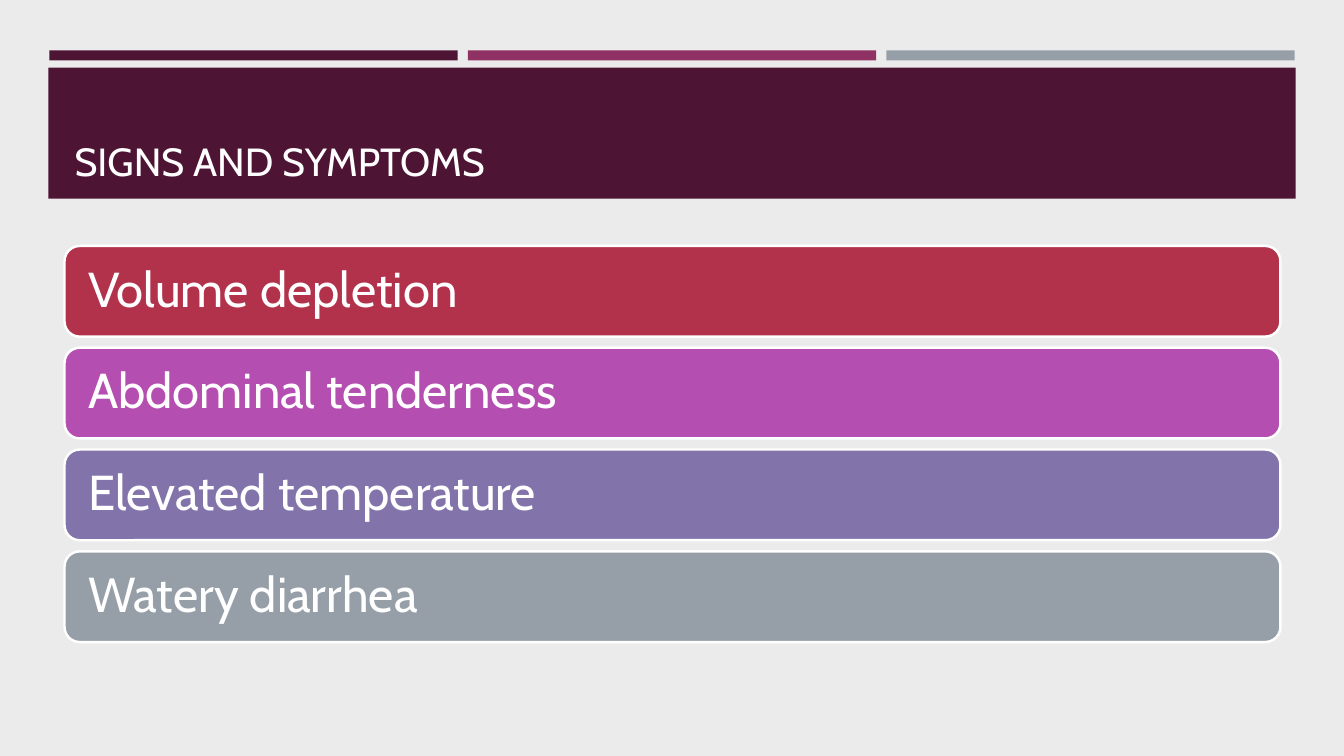
from pptx import Presentation
from pptx.dml.color import RGBColor
from pptx.enum.shapes import MSO_SHAPE as Shape
from pptx.enum.text import MSO_ANCHOR as Anchor, MSO_AUTO_SIZE as AutoSize, PP_ALIGN as Align
from pptx.util import Pt

EMU_PER_PX = 9144  # 100 px to the inch
COLOURS = {
    "background": "EBEBEB",
    "plum": "4D1434",
    "berry": "903163",
    "grey": "969FA7",
    "red": "B2324B",
    "orchid": "B44EB1",
    "violet": "8274AB",
    "white": "FFFFFF",
}
SYMPTOMS = [
    ("Volume depletion", "red"),
    ("Abdominal tenderness", "orchid"),
    ("Elevated temperature", "violet"),
    ("Watery diarrhea", "grey"),
]


def px(length):
    return length * EMU_PER_PX


def colour(name):
    return RGBColor.from_string(COLOURS[name])


def apply(target, values):
    """Set each named attribute of the target."""
    for name, value in values.items():
        setattr(target, name, value)


class SlideBuilder:
    font = "Cabin"

    def __init__(self, deck):
        self.page = deck.slides.add_slide(deck.slide_layouts[5])
        fill = self.page.background.fill
        fill.solid()
        fill.fore_color.rgb = colour("background")

    def block(self, kind, left, top, width, height, fill):
        box = self.page.shapes.add_shape(kind, px(left), px(top), px(width), px(height))
        box.shadow.inherit = False
        box.fill.solid()
        box.fill.fore_color.rgb = colour(fill)
        box.line.fill.background()
        return box

    def label(self, box, text, size, anchor, inset, **spacing):
        frame = box.text_frame
        frame.text = text
        apply(frame, {
            "word_wrap": True,
            "auto_size": AutoSize.NONE,
            "vertical_anchor": anchor,
            "margin_left": px(inset),
            "margin_right": px(inset),
        })
        para = frame.paragraphs[0]
        apply(para, {"alignment": Align.LEFT, **spacing})
        span = para.runs[0]
        apply(span.font, {"name": self.font, "size": Pt(size)})
        span.font.color.rgb = colour("white")

    def title(self, text, left, top, width, height):
        box = self.page.shapes.title
        apply(box, {"left": px(left), "top": px(top), "width": px(width), "height": px(height)})
        self.label(box, text, 28, Anchor.BOTTOM, 10)
        # Bring the title in front of its band
        self.page.shapes._spTree.append(box._element)

    def symptom(self, text, left, top, width, height, fill):
        box = self.block(Shape.ROUNDED_RECTANGLE, left, top, width, height, fill)
        box.line.color.rgb = colour("white")
        box.line.width = Pt(1.75)
        self.label(box, text, 35, Anchor.MIDDLE, 19, line_spacing=0.9)


def main():
    deck = Presentation()
    apply(deck, {"slide_width": px(1333), "slide_height": px(750)})
    slide = SlideBuilder(deck)

    for column, fill in enumerate(["plum", "berry", "grey"]):
        slide.block(Shape.RECTANGLE, 49 + 415 * column, 50, 405, 10, fill)
    slide.block(Shape.RECTANGLE, 48, 67, 1237, 130, "plum")
    slide.title("SIGNS AND SYMPTOMS", 64, 77, 1206, 111)

    for row, (text, fill) in enumerate(SYMPTOMS):
        slide.symptom(text, 64, 244 + 101 * row, 1206, 90, fill)

    deck.save("out.pptx")


if __name__ == "__main__":
    main()
